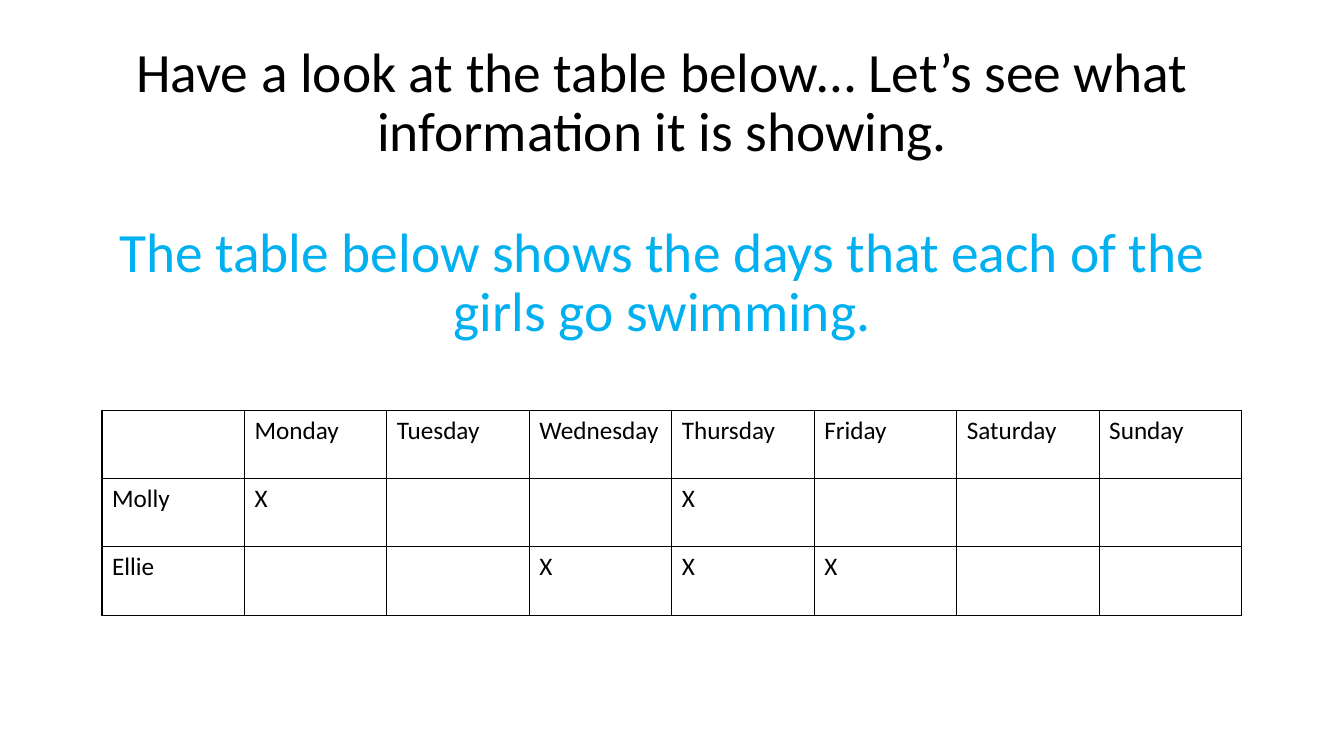
"""Builds a slide that introduces a table of swimming days."""
from lxml import etree
from pptx import Presentation
from pptx.dml.color import RGBColor
from pptx.enum.text import MSO_ANCHOR, PP_ALIGN
from pptx.oxml.ns import qn
from pptx.util import Cm, Pt

CENTER, LEFT = PP_ALIGN.CENTER, PP_ALIGN.LEFT
MIDDLE = MSO_ANCHOR.MIDDLE

DAYS = ["Monday", "Tuesday", "Wednesday", "Thursday", "Friday", "Saturday", "Sunday"]
SWIMMERS = {
    "Molly": ["Monday", "Thursday"],
    "Ellie": ["Wednesday", "Thursday", "Friday"],
}
HEADING = [
    ("Have a look at the table below… Let’s see what information it is showing.", "text", 0),
    ("The table below shows the days that each of the girls go swimming.", "accent", 43),
]
THEME = {
    "font": "Calibri",
    "text": RGBColor(0x00, 0x00, 0x00),
    "accent": RGBColor(0x00, 0xB0, 0xF0),
    "border": "000000",
    "border_width": Pt(1),
    "heading_size": Pt(39.6),
    "cell_size": Pt(18),
}
HEADING_BOX = (Cm(2.08), Cm(3.05), Cm(29.21), Cm(3.68))
TABLE_LEFT, TABLE_TOP = Cm(2.57), Cm(10.34)
COL_WIDTH, ROW_HEIGHT = Cm(3.59), Cm(1.72)


def write(p, text, size, color, **layout):
    for name, value in layout.items():
        setattr(p, name, value)
    r = p.add_run()
    r.text = text
    r.font.color.rgb = THEME[color]
    for name, value in {"name": THEME["font"], "size": THEME[size]}.items():
        setattr(r.font, name, value)


def add_borders(cell):
    props = cell._tc.get_or_add_tcPr()
    for i, side in enumerate(("lnL", "lnR", "lnT", "lnB")):
        line = etree.Element(qn(f"a:{side}"), w=str(THEME["border_width"]))
        fill = etree.SubElement(line, qn("a:solidFill"))
        etree.SubElement(fill, qn("a:srgbClr"), val=THEME["border"])
        props.insert(i, line)


def add_heading(s):
    tf = s.shapes.add_textbox(*HEADING_BOX).text_frame
    for name, value in {"word_wrap": True, "vertical_anchor": MIDDLE}.items():
        setattr(tf, name, value)
    for i, (text, color, gap) in enumerate(HEADING):
        p = tf.add_paragraph() if i else tf.paragraphs[0]
        write(p, text, "heading_size", color,
              alignment=CENTER, line_spacing=0.9, space_before=Pt(gap))


def add_swimming_table(s):
    rows = [["", *DAYS]]
    for girl, swims in SWIMMERS.items():
        rows.append([girl, *("X" if day in swims else "" for day in DAYS)])
    n_rows, n_cols = len(rows), len(rows[0])
    table = s.shapes.add_table(n_rows, n_cols, TABLE_LEFT, TABLE_TOP,
                               COL_WIDTH * n_cols, ROW_HEIGHT * n_rows).table
    table.first_row = table.horz_banding = False
    for column in table.columns:
        column.width = COL_WIDTH
    for row, values in zip(table.rows, rows):
        row.height = ROW_HEIGHT
        for cell, text in zip(row.cells, values):
            cell.fill.background()
            add_borders(cell)
            if text:
                write(cell.text_frame.paragraphs[0], text, "cell_size", "text", alignment=LEFT)


def main():
    prs = Presentation()
    prs.slide_width, prs.slide_height = Cm(33.87), Cm(19.05)
    s = prs.slides.add_slide(prs.slide_layouts[6])
    add_heading(s)
    add_swimming_table(s)
    prs.save("out.pptx")


if __name__ == "__main__":
    main()
